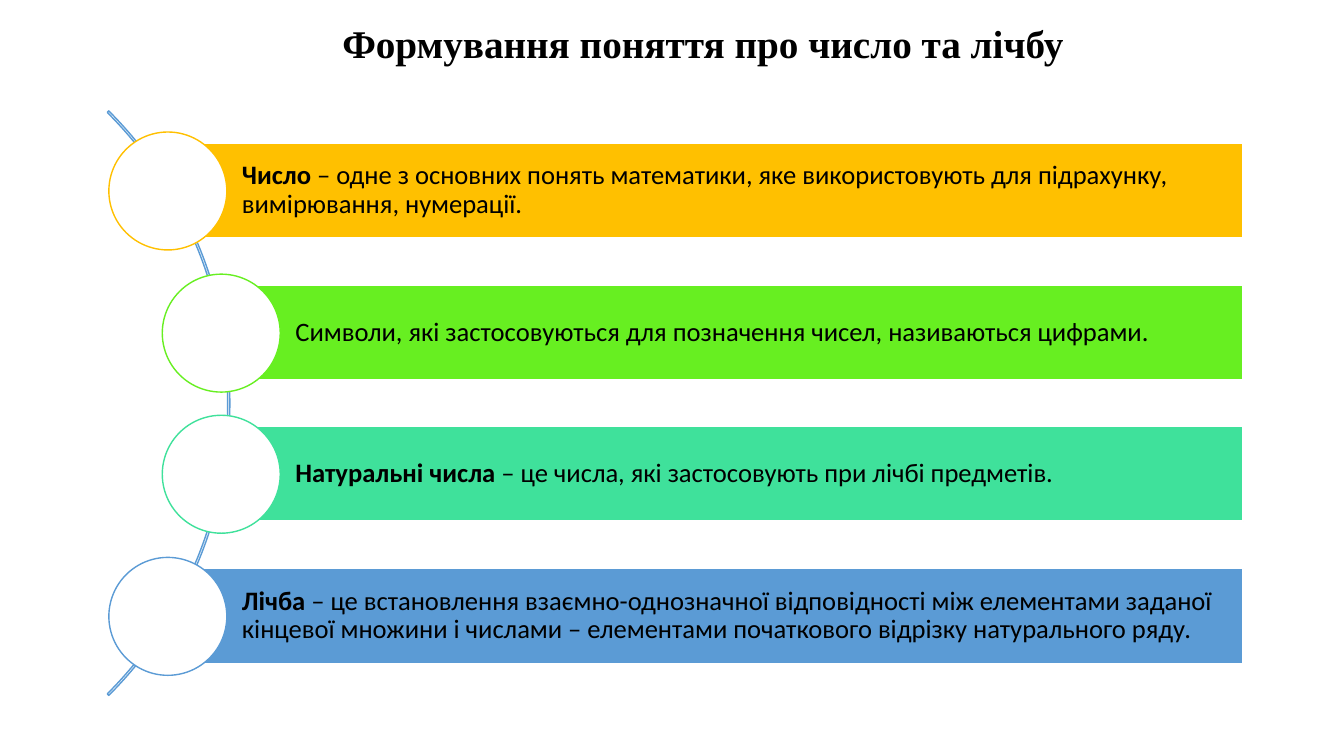
import pptx
import pptx.dml.color
import pptx.enum.shapes
import pptx.enum.text
import pptx.util

RGBColor = pptx.dml.color.RGBColor
SHAPES = pptx.enum.shapes.MSO_SHAPE
ALIGN = pptx.enum.text.PP_ALIGN

PX = 9144  # EMU in one px, 100 px to the inch
BLACK = RGBColor(0x00, 0x00, 0x00)
WHITE = RGBColor(0xFF, 0xFF, 0xFF)
AMBER = RGBColor(0xFF, 0xC0, 0x00)
LIME = RGBColor(0x67, 0xEF, 0x21)
MINT = RGBColor(0x3F, 0xE1, 0x9B)
BLUE = RGBColor(0x5B, 0x9B, 0xD5)

TITLE = "Формування поняття про число та лічбу"
# Colour, left edge of the bar, bold term, rest of the text
DEFINITIONS = [
    (AMBER, 166, "Число ",
     "– одне з основних понять математики, яке використовують для "
     "підрахунку, вимірювання, нумерації."),
    (LIME, 219, "",
     "Символи, які застосовуються для позначення чисел, називаються цифрами."),
    (MINT, 219, "Натуральні числа ",
     "– це числа, які застосовують при лічбі предметів."),
    (BLUE, 166, "Лічба ",
     "– це встановлення взаємно-однозначної відповідності між елементами "
     "заданої кінцевої множини і числами – елементами початкового відрізку "
     "натурального ряду."),
]
BARS_TOP, BARS_BOTTOM, BAR_RIGHT, BAR_HEIGHT = 142, 658, 1233, 94
CIRCLE_SIZE = 117


def px(length):
    return pptx.util.Emu(length * PX)


def set_all(target, values):
    for name, value in values.items():
        setattr(target, name, value)


def add_outlined(page, kind, left, top, width, height, fill, line):
    """Add a preset shape with a 1 pt line; fill None leaves it hollow."""
    shape = page.shapes.add_shape(
        kind, px(left), px(top), px(width), px(height))
    shape.shadow.inherit = False
    if fill is None:
        shape.fill.background()
    else:
        shape.fill.solid()
        shape.fill.fore_color.rgb = fill
    shape.line.color.rgb = line
    shape.line.width = pptx.util.Pt(1)
    return shape


def add_span(para, text, font_name, size, bold):
    span = para.add_run()
    span.text = text
    set_all(span.font, {"name": font_name, "size": pptx.util.Pt(size),
                        "bold": bold})
    span.font.color.rgb = BLACK


def format_frame(frame, align, insets):
    """Centre the text vertically and return its first paragraph."""
    set_all(frame, {"word_wrap": True,
                    "vertical_anchor": pptx.enum.text.MSO_ANCHOR.MIDDLE,
                    **insets})
    para = frame.paragraphs[0]
    set_all(para, {"alignment": align, "line_spacing": 0.9})
    return para


def add_title(page):
    title = page.shapes.title
    set_all(title, {"left": px(280), "top": px(16),
                    "width": px(834), "height": px(59)})
    para = format_frame(title.text_frame, ALIGN.CENTER, {})
    add_span(para, TITLE, "Times New Roman", 28, True)


def add_arc(page):
    arc = add_outlined(page, SHAPES.BLOCK_ARC, -592, -10, 820, 820, None, BLUE)
    # Angles of 315 and 45 degrees, then the band's thickness
    for index, value in enumerate((189, 27, 0.0026)):
        arc.adjustments[index] = value


def add_definition(page, top, colour, left, term, text):
    bar = add_outlined(page, SHAPES.RECTANGLE, left, top,
                       BAR_RIGHT - left, BAR_HEIGHT, colour, WHITE)
    insets = {"margin_left": px(74), "margin_right": px(5),
              "margin_top": px(5), "margin_bottom": px(5)}
    para = format_frame(bar.text_frame, ALIGN.LEFT, insets)
    if term:
        add_span(para, term, "Calibri", 19, True)
    add_span(para, text, "Calibri", 19, False)
    circle_top = top - (CIRCLE_SIZE - BAR_HEIGHT) // 2
    add_outlined(page, SHAPES.OVAL, left - CIRCLE_SIZE // 2, circle_top,
                 CIRCLE_SIZE, CIRCLE_SIZE, WHITE, colour)


def main():
    deck = pptx.Presentation()
    deck.slide_width, deck.slide_height = px(1333), px(750)
    page = deck.slides.add_slide(deck.slide_layouts[5])
    add_title(page)
    add_arc(page)
    pitch = (BARS_BOTTOM - BAR_HEIGHT - BARS_TOP) / (len(DEFINITIONS) - 1)
    for row, definition in enumerate(DEFINITIONS):
        add_definition(page, round(BARS_TOP + row * pitch), *definition)
    deck.save("out.pptx")


if __name__ == "__main__":
    main()
